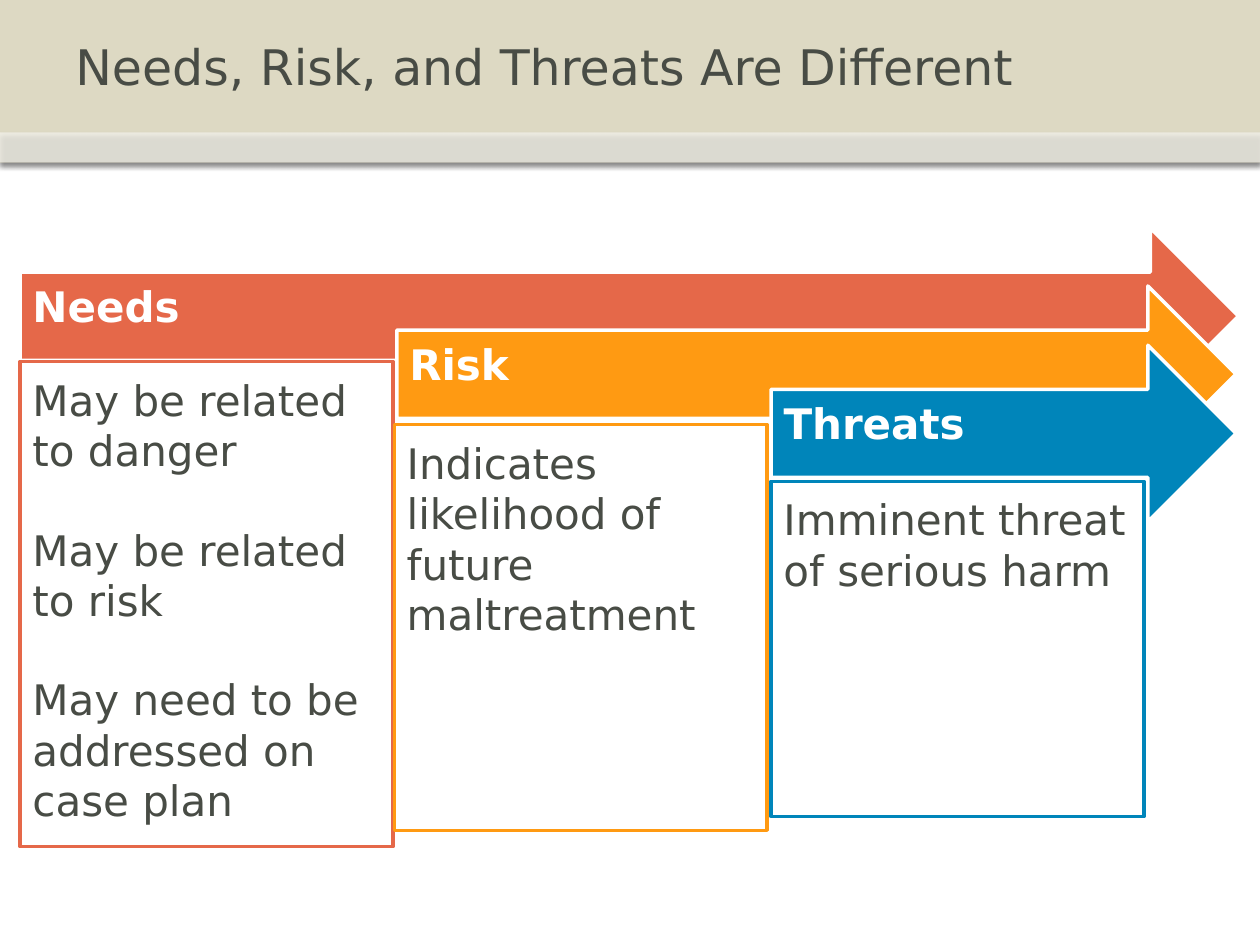
from lxml import etree
from pptx import Presentation
from pptx.dml.color import RGBColor
from pptx.enum import shapes, text
from pptx.oxml import ns
from pptx.util import Inches, Pt

TITLE = "Needs, Risk, and Threats Are Different"
FONT = "DejaVu Sans"
WHITE = RGBColor(0xFF, 0xFF, 0xFF)
INK = RGBColor(0x48, 0x4C, 0x45)
SAND = RGBColor(0xDD, 0xD9, 0xC3)
RED = RGBColor(0xE5, 0x68, 0x49)
GOLD = RGBColor(0xFF, 0x9A, 0x12)
BLUE = RGBColor(0x00, 0x85, 0xBA)

STEPS = [
    dict(head="Needs", color=RED, arrow=(0.16, 1.81, 9.67), box=(0.16, 2.87, 3.85),
         notes=["May be related to danger", "May be related to risk",
                "May need to be addressed on case plan"]),
    dict(head="Risk", color=GOLD, arrow=(3.15, 2.27, 6.66), box=(3.13, 3.37, 3.22),
         notes=["Indicates likelihood of future maltreatment"]),
    dict(head="Threats", color=BLUE, arrow=(6.12, 2.74, 3.69), box=(6.12, 3.82, 2.66),
         notes=["Imminent threat of serious harm"]),
]
ARROW_H, BOX_W = 1.4, 2.96

deck = Presentation()
deck.slide_width, deck.slide_height = Inches(10), Inches(7.5)
slide = deck.slides.add_slide(deck.slide_layouts[6])


def add(kind, area, fill, line=None):
    shape = slide.shapes.add_shape(kind, *map(Inches, area))
    shape.shadow.inherit = False
    shape.fill.solid()
    shape.fill.fore_color.rgb = fill
    if line is None:
        shape.line.fill.background()
    else:
        shape.line.color.rgb = line
        shape.line.width = Pt(2)
    return shape


def write(shape, lines, size, color, anchor, pads=(0.1, 0.1, 0.1, 0.1), bold=False):
    frame = shape.text_frame
    frame.word_wrap = True
    frame.vertical_anchor = anchor
    (frame.margin_left, frame.margin_top,
     frame.margin_right, frame.margin_bottom) = map(Inches, pads)
    frame.text = "\n".join(lines)
    for i, para in enumerate(frame.paragraphs):
        para.alignment = text.PP_ALIGN.LEFT
        para.space_before = Pt(28 if i else 0)
        font = para.font
        font.name, font.size, font.bold = FONT, Pt(size), bold
        font.color.rgb = color


def shade(shape):
    effects = shape._element.spPr.find(ns.qn("a:effectLst"))
    glow = etree.SubElement(effects, ns.qn("a:outerShdw"), blurRad=str(Pt(3.1)),
                            dist=str(Pt(1.8)), dir="5400000", rotWithShape="0")
    tone = etree.SubElement(glow, ns.qn("a:srgbClr"), val="000000")
    etree.SubElement(tone, ns.qn("a:alpha"), val="35000")


RECT = shapes.MSO_SHAPE.RECTANGLE
MIDDLE, TOP = text.MSO_ANCHOR.MIDDLE, text.MSO_ANCHOR.TOP

band = add(RECT, (0, 0, 10, 1.29), SAND)
strip = add(RECT, (0, 1.05, 10, 0.24), WHITE)
tint = strip._element.spPr.find(".//" + ns.qn("a:srgbClr"))
etree.SubElement(tint, ns.qn("a:alpha"), val="53000")
for bar in (band, strip):
    shade(bar)

title = slide.shapes.add_textbox(*map(Inches, (0.5, 0, 9, 1.05)))
write(title, [TITLE], 28, INK, MIDDLE, (0.1, 0.05, 0.1, 0.05))

for step in STEPS:
    arrow = add(shapes.MSO_SHAPE.RIGHT_ARROW, (*step["arrow"], ARROW_H), step["color"], WHITE)
    write(arrow, [step["head"]], 24, WHITE, MIDDLE, (0.1, 0.1, 0.28, 0.22), True)
    arrow.text_frame.paragraphs[0].line_spacing = 0.9
    left, top, height = step["box"]
    box = add(RECT, (left, top, BOX_W, height), WHITE, step["color"])
    write(box, step["notes"], 24, INK, TOP)

deck.save("out.pptx")
